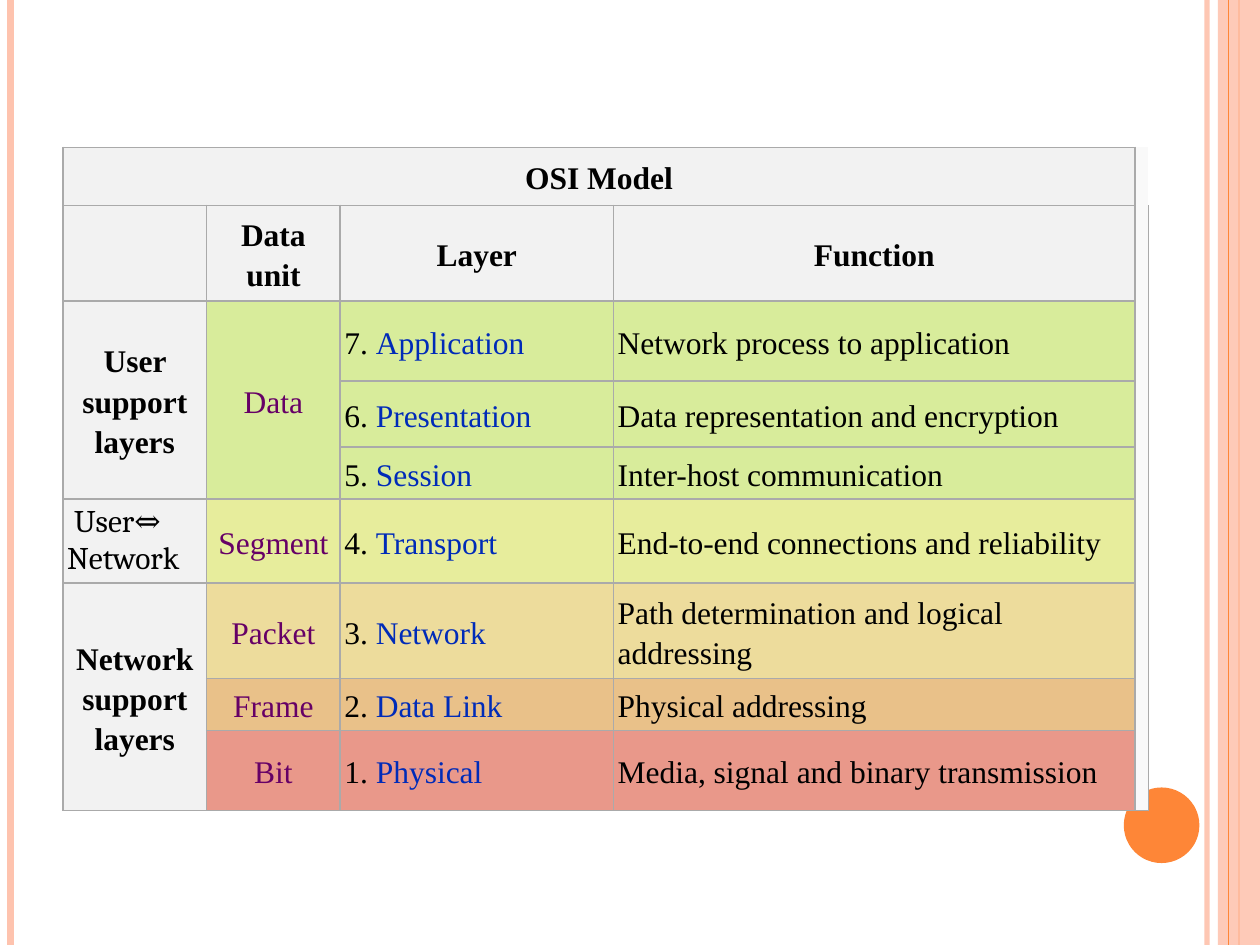
"""Build a slide with the OSI model table beside decorative side bands."""
from dataclasses import dataclass

import pptx
import pptx.dml.color
import pptx.enum.shapes
import pptx.enum.text
import pptx.oxml
import pptx.oxml.ns
import pptx.util

Pt = pptx.util.Pt
qn = pptx.oxml.ns.qn
CENTER = pptx.enum.text.PP_ALIGN.CENTER
LEFT = pptx.enum.text.PP_ALIGN.LEFT


@dataclass(frozen=True)
class Theme:
    peach: str = "FEC3AE"
    orange: str = "FE8637"
    grid: str = "AAAAAA"
    heading: str = "F2F2F2"
    margin: str = "F9F9F9"
    black: str = "000000"
    unit: str = "660066"
    link: str = "002BB8"
    serif: str = "Times New Roman"
    bridge: str = "Cambria"
    size: float = 18


THEME = Theme()
WIDTH, HEIGHT = 720, 540
COLUMNS = (82.1, 76.3, 156.2, 298.1, 5)
ROWS = (33.2, 54.5, 45.9, 37.7, 29.6, 48.2, 54.5, 29.6, 45.9)
HEADINGS = ("Data unit", "Layer", "Function")
LAYERS = (
    ("Data", "Application", "Network process to application", "D8EC9B"),
    ("", "Presentation", "Data representation and encryption", "D8EC9B"),
    ("", "Session", "Inter-host communication", "D8EC9B"),
    ("Segment", "Transport", "End-to-end connections and reliability", "E7ED9C"),
    ("Packet", "Network", "Path determination and logical addressing", "EDDC9C"),
    ("Frame", "Data Link", "Physical addressing", "E9C189"),
    ("Bit", "Physical", "Media, signal and binary transmission", "E9988A"),
)
MERGES = ((0, 0, 0, 3), (2, 0, 4, 0), (2, 1, 4, 1), (6, 0, 8, 0))


def rgb(colour):
    return pptx.dml.color.RGBColor.from_string(colour)


def set_opacity(element, percent):
    for colour in element.iter(qn("a:srgbClr")):
        alpha = colour.makeelement(qn("a:alpha"), {"val": str(percent * 1000)})
        colour.append(alpha)


def add_stripe(slide, x, weight, colour, opacity=100):
    stripe = slide.shapes.add_connector(
        pptx.enum.shapes.MSO_CONNECTOR.STRAIGHT, Pt(x), 0, Pt(x), Pt(HEIGHT))
    stripe.line.width = Pt(weight)
    stripe.line.color.rgb = rgb(colour)
    if opacity < 100:
        set_opacity(stripe._element, opacity)
    properties = stripe._element.spPr
    properties.append(properties.makeelement(qn("a:effectLst"), {}))


def add_block(slide, kind, left, top, width, height, colour, opacity=100):
    block = slide.shapes.add_shape(kind, Pt(left), Pt(top), Pt(width), Pt(height))
    block.shadow.inherit = False
    block.fill.solid()
    block.fill.fore_color.rgb = rgb(colour)
    block.line.fill.background()
    if opacity < 100:
        set_opacity(block._element, opacity)


def add_decoration(slide):
    shapes = pptx.enum.shapes.MSO_SHAPE
    add_stripe(slide, 689.8, 3, THEME.peach, 93)
    add_stripe(slide, 6, 4.5, THEME.peach)
    add_stripe(slide, 708, 1.5, THEME.orange)
    add_block(slide, shapes.RECTANGLE, 696, 0, 24, HEIGHT, THEME.peach, 87)
    add_stripe(slide, 702, 0.75, THEME.orange)
    add_block(slide, shapes.OVAL, 642.2, 450, 43.2, 43.2, THEME.orange)


def set_borders(cell, sides):
    properties = cell._tc.get_or_add_tcPr()
    for position, side in enumerate("LRTB"):
        line = properties.makeelement(qn(f"a:ln{side}"), {"w": str(int(Pt(1)))})
        if side in sides:
            paint = pptx.oxml.parse_xml(
                f'<a:solidFill {pptx.oxml.ns.nsdecls("a")}>'
                f'<a:srgbClr val="{THEME.grid}"/></a:solidFill>')
        else:
            paint = line.makeelement(qn("a:noFill"), {})
        line.append(paint)
        properties.insert(position, line)


def paint_cell(cell, fill, sides="LRTB"):
    cell.fill.solid()
    cell.fill.fore_color.rgb = rgb(fill)
    cell.margin_left = cell.margin_right = Pt(2.4)
    cell.margin_top = cell.margin_bottom = Pt(2.4)
    cell.vertical_anchor = pptx.enum.text.MSO_ANCHOR.MIDDLE
    set_borders(cell, sides)


def write_cell(cell, text, align=LEFT, bold=False, colour=THEME.black,
               family=THEME.serif, spaced=True):
    paragraph = cell.text_frame.paragraphs[0]
    paragraph.text = text
    paragraph.alignment = align
    if spaced:
        paragraph.line_spacing = 1.15
        paragraph.space_after = Pt(12)
    paragraph.font.name = family
    paragraph.font.size = Pt(THEME.size)
    paragraph.font.bold = bold
    paragraph.font.color.rgb = rgb(colour)
    return paragraph


def add_grid(slide):
    model = slide.shapes.add_table(
        len(ROWS), len(COLUMNS), Pt(36), Pt(84.2), Pt(sum(COLUMNS)), Pt(sum(ROWS))).table
    model.first_row = model.horz_banding = False
    for column, width in zip(model.columns, COLUMNS):
        column.width = Pt(width)
    for row, height in zip(model.rows, ROWS):
        row.height = Pt(height)

    last_row, last_column = len(ROWS) - 1, len(COLUMNS) - 1
    for r in range(len(ROWS)):
        for c in range(last_column):
            layered = r >= 2 and c >= 1
            paint_cell(model.cell(r, c), LAYERS[r - 2][-1] if layered else THEME.heading)
        sides = "L" if r == 0 else "LRB" if r == last_row else "LR"
        paint_cell(model.cell(r, last_column), THEME.margin, sides)
    for top, left, bottom, right in MERGES:
        model.cell(top, left).merge(model.cell(bottom, right))
    return model


def fill_headings(model):
    write_cell(model.cell(0, 0), "OSI Model", CENTER, True)
    for c, heading in enumerate(HEADINGS, 1):
        write_cell(model.cell(1, c), heading, CENTER, True)
    for r, group in ((2, "User support\vlayers"), (6, "Network support\vlayers")):
        write_cell(model.cell(r, 0), group, CENTER, True)
    write_cell(model.cell(5, 0), " User⇔ Network", family=THEME.bridge, spaced=False)


def fill_layers(model):
    for r, (unit, layer, function, _) in enumerate(LAYERS, 2):
        if unit:
            write_cell(model.cell(r, 1), unit, CENTER, colour=THEME.unit)
        number = len(ROWS) - r
        layer_name = write_cell(model.cell(r, 2), f"{number}. ").add_run()
        layer_name.text = layer
        layer_name.font.color.rgb = rgb(THEME.link)
        write_cell(model.cell(r, 3), function)


def main():
    deck = pptx.Presentation()
    deck.slide_width, deck.slide_height = Pt(WIDTH), Pt(HEIGHT)
    slide = deck.slides.add_slide(deck.slide_layouts[6])
    add_decoration(slide)
    model = add_grid(slide)
    fill_headings(model)
    fill_layers(model)
    deck.save("out.pptx")


if __name__ == "__main__":
    main()
